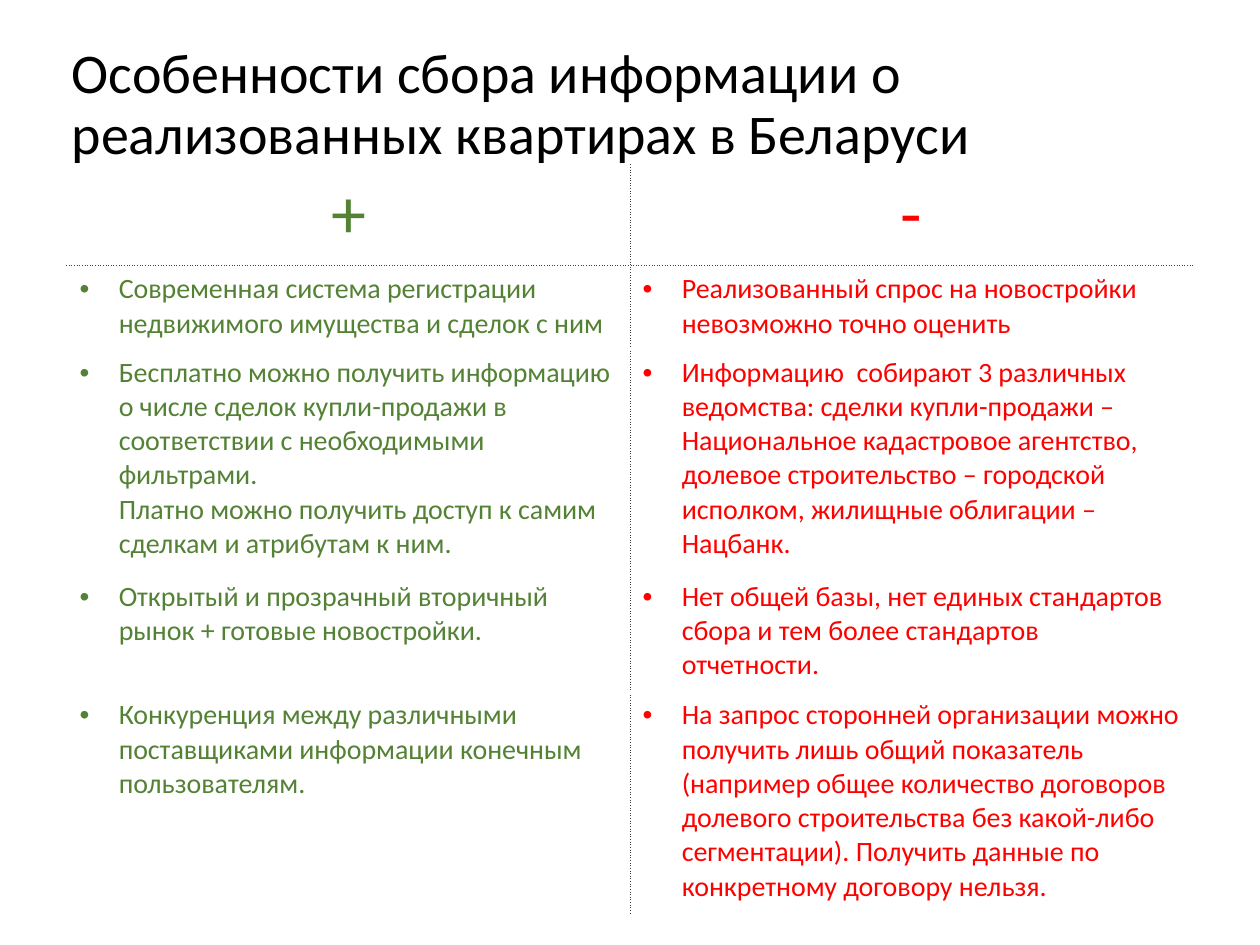
"""Build a slide weighing pros and cons of collecting data on sold flats."""
from copy import deepcopy

from lxml import etree
from pptx import Presentation
from pptx.dml.color import RGBColor
from pptx.enum.text import MSO_ANCHOR, MSO_AUTO_SIZE, PP_ALIGN
from pptx.oxml.ns import qn
from pptx.util import Cm, Pt

LEFT, CENTER = PP_ALIGN.LEFT, PP_ALIGN.CENTER
MIDDLE, NO_FIT = MSO_ANCHOR.MIDDLE, MSO_AUTO_SIZE.NONE
BLACK = RGBColor(0x00, 0x00, 0x00)
GREEN = RGBColor(0x54, 0x82, 0x35)
RED = RGBColor(0xFF, 0x00, 0x00)
GREY = RGBColor(0x40, 0x40, 0x40)

TITLE = "Особенности сбора информации о реализованных квартирах в Беларуси"
ROWS = [
    ("+", "-"),
    ("Современная система регистрации недвижимого имущества и сделок с ним",
     "Реализованный спрос на новостройки невозможно точно оценить"),
    ("Бесплатно можно получить информацию о числе сделок купли-продажи в "
     "соответствии с необходимыми фильтрами. \n"
     "Платно можно получить доступ к самим сделкам и атрибутам к ним.",
     "Информацию  собирают 3 различных ведомства: сделки купли-продажи – "
     "Национальное кадастровое агентство, долевое строительство – городской "
     "исполком, жилищные облигации – Нацбанк."),
    ("Открытый и прозрачный вторичный рынок + готовые новостройки.",
     "Нет общей базы, нет единых стандартов сбора и тем более стандартов отчетности."),
    ("Конкуренция между различными поставщиками информации конечным пользователям.",
     "На запрос сторонней организации можно получить лишь общий показатель \n"
     "(например общее количество договоров долевого строительства без какой-либо "
     "сегментации). Получить данные по конкретному договору нельзя."),
]
COLORS = (GREEN, RED)
HEIGHTS = (2.03, 1.68, 4.52, 2.39, 4.52)
COL_WIDTH = 11.35
INDENT = Cm(0.79)


def write(p, text, size, color, align):
    p.text = text
    p.alignment = align
    fmt = {"name": "Calibri", "size": Pt(size), "bold": False}
    for r in p.runs:
        for key, value in fmt.items():
            setattr(r.font, key, value)
        r.font.color.rgb = color
    for br in p._p.findall(qn("a:br")):
        br.append(deepcopy(p.runs[0]._r.rPr))


def add_bullet(p):
    pPr = p._p.get_or_add_pPr()
    pPr.set("marL", str(INDENT))
    pPr.set("indent", str(-INDENT))
    etree.SubElement(pPr, qn("a:buFont"), typeface="Arial")
    etree.SubElement(pPr, qn("a:buChar"), char="•")


def add_border(cell, side):
    ln = etree.SubElement(cell._tc.get_or_add_tcPr(), qn(f"a:ln{side}"), w=str(Pt(0.5)))
    fill = etree.SubElement(ln, qn("a:solidFill"))
    etree.SubElement(fill, qn("a:srgbClr"), val=str(GREY))
    etree.SubElement(ln, qn("a:prstDash"), val="sysDot")


def add_title(s):
    title = s.shapes.title
    box = {"left": Cm(1.19), "top": Cm(0.74), "width": Cm(23.01), "height": Cm(2.79)}
    for key, value in box.items():
        setattr(title, key, value)
    tf = title.text_frame
    for key, value in {"word_wrap": True, "auto_size": NO_FIT, "vertical_anchor": MIDDLE}.items():
        setattr(tf, key, value)
    p = tf.paragraphs[0]
    write(p, TITLE, 32, BLACK, LEFT)
    p.line_spacing = 0.9


def add_comparison(s):
    table = s.shapes.add_table(len(ROWS), len(COLORS), Cm(1.35), Cm(3.33),
                               Cm(COL_WIDTH * len(COLORS)), Cm(sum(HEIGHTS))).table
    table.first_row = table.horz_banding = False
    for column in table.columns:
        column.width = Cm(COL_WIDTH)
    for i, (texts, height) in enumerate(zip(ROWS, HEIGHTS)):
        table.rows[i].height = Cm(height)
        for j, (text, color) in enumerate(zip(texts, COLORS)):
            cell = table.cell(i, j)
            p = cell.text_frame.paragraphs[0]
            if i == 0:
                write(p, text, 40, color, CENTER)
            else:
                write(p, text, 16, color, LEFT)
                add_bullet(p)
            add_border(cell, "RL"[j])
            if i < 2:
                add_border(cell, "BT"[i])
            cell.fill.background()


def main():
    prs = Presentation()
    prs.slide_width, prs.slide_height = Cm(25.4), Cm(19.05)
    s = prs.slides.add_slide(prs.slide_layouts[5])
    add_title(s)
    add_comparison(s)
    prs.save("out.pptx")


if __name__ == "__main__":
    main()
